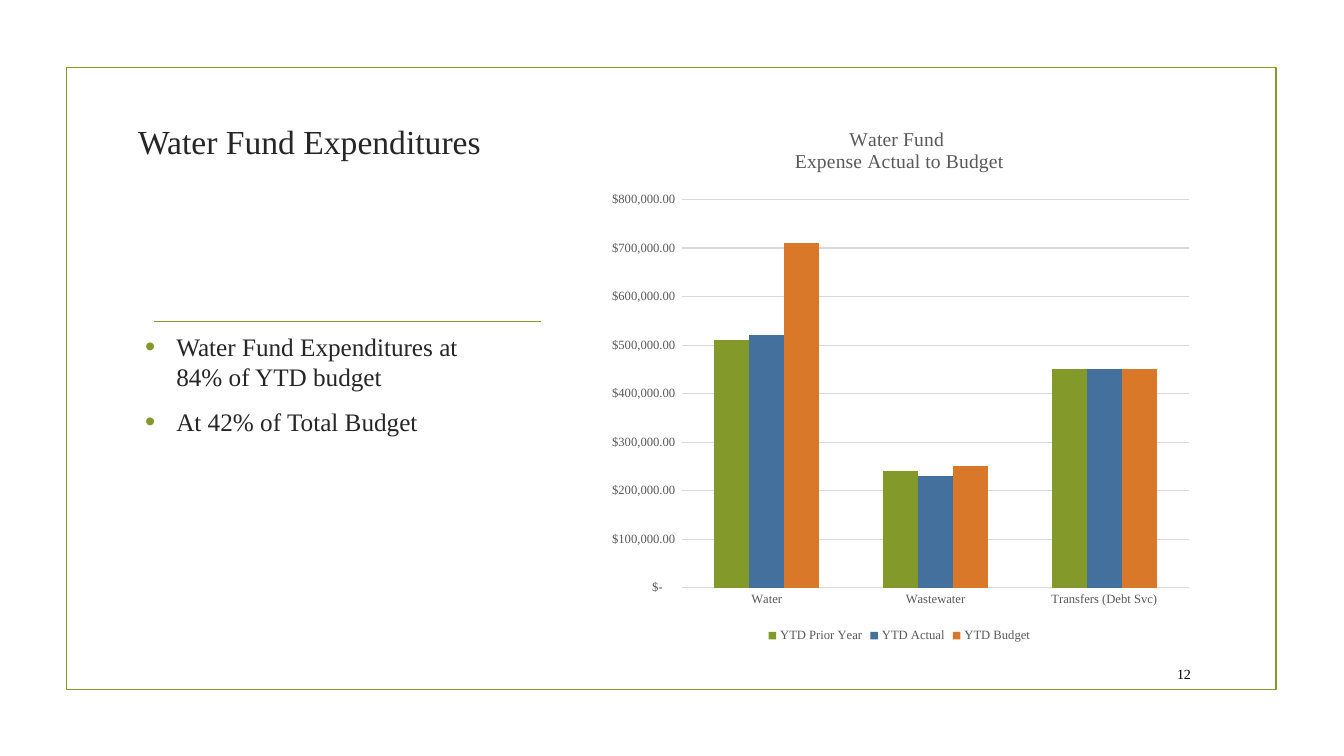
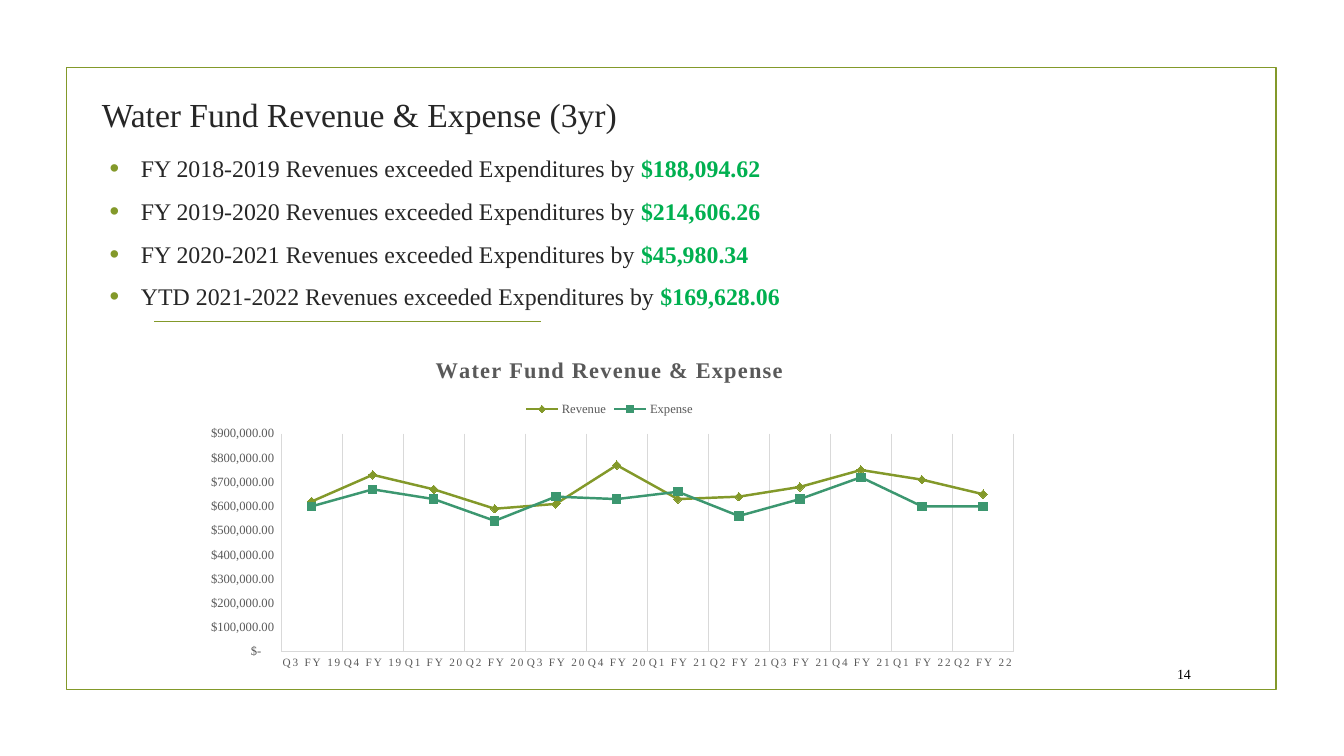
"""Build two water fund slides with bullets and native charts."""
from dataclasses import dataclass

from pptx import Presentation
from pptx.chart.data import CategoryChartData
from pptx.dml.color import RGBColor
from pptx.enum.chart import XL_CHART_TYPE, XL_LEGEND_POSITION, XL_MARKER_STYLE, XL_TICK_MARK
from pptx.enum.shapes import MSO_CONNECTOR, MSO_SHAPE
from pptx.enum.text import MSO_ANCHOR, PP_ALIGN
from pptx.oxml import parse_xml
from pptx.oxml.ns import nsdecls
from pptx.oxml.xmlchemy import OxmlElement
from pptx.util import Inches, Pt

COLUMNS, LINES = XL_CHART_TYPE.COLUMN_CLUSTERED, XL_CHART_TYPE.LINE_MARKERS
LEGEND_BOTTOM, LEGEND_TOP = XL_LEGEND_POSITION.BOTTOM, XL_LEGEND_POSITION.TOP
DIAMOND, SQUARE = XL_MARKER_STYLE.DIAMOND, XL_MARKER_STYLE.SQUARE
TICK_NONE = XL_TICK_MARK.NONE
STRAIGHT, RECTANGLE = MSO_CONNECTOR.STRAIGHT, MSO_SHAPE.RECTANGLE
TOP, MIDDLE, BOTTOM = MSO_ANCHOR.TOP, MSO_ANCHOR.MIDDLE, MSO_ANCHOR.BOTTOM
CENTER, RIGHT = PP_ALIGN.CENTER, PP_ALIGN.RIGHT


@dataclass(frozen=True)
class Theme:
    font: str = "Times New Roman"
    green: str = "83992A"
    blue: str = "44709D"
    orange: str = "D97828"
    teal: str = "3C9770"
    gain: str = "00B050"
    ink: str = "262626"
    black: str = "000000"
    gray: str = "595959"
    grid: str = "D9D9D9"
    title_size: float = 24
    number_size: float = 10
    label_size: float = 9
    rule_width: float = 1.25
    grid_width: float = 0.75
    series_width: float = 1.75


THEME = Theme()
MONEY = '_("$"* #,##0.00_);_("$"* \\(#,##0.00\\);_("$"* "-"??_);_(@_)'


def add_text(para, text, size, color=THEME.ink, bold=False, spacing=0):
    span = para.add_run()
    span.text = text
    span.font.name = THEME.font
    span.font.size = Pt(size)
    span.font.bold = bold
    span.font.color.rgb = RGBColor.from_string(color)
    if spacing:
        span.font._element.set("spc", str(spacing))


def add_frame(page, position, anchor):
    box = page.shapes.add_textbox(*map(Inches, position))
    box.text_frame.word_wrap = True
    box.text_frame.vertical_anchor = anchor
    return box.text_frame


EXCEEDED = " Revenues exceeded Expenditures by "
SLIDES = [
    dict(
        number="12",
        title="Water Fund Expenditures",
        title_at=(0.92, 0.5, 4.3, 1.15),
        body_at=(1.34, 3.24, 3.72, 2.6),
        body_size=18,
        bullets=[("Water Fund Expenditures at 84% of YTD budget", ""), ("At 42% of Total Budget", "")],
        chart_type=COLUMNS,
        chart_at=(5.93, 1.07, 5.98, 5.35),
        plot_at=dict(x=0.14, y=0.17, w=0.84, h=0.72),
        chart_title=["Water Fund ", "Expense Actual to Budget"],
        chart_title_format=dict(size=14, color=THEME.gray),
        legend=LEGEND_BOTTOM,
        maximum=800000,
        category_size=9,
        category_spacing=0,
        categories=["Water", "Wastewater", "Transfers (Debt Svc)"],
        series=[
            ("YTD Prior Year", THEME.green, None, [510000, 240000, 450000]),
            ("YTD Actual", THEME.blue, None, [520000, 230000, 450000]),
            ("YTD Budget", THEME.orange, None, [710000, 250000, 450000]),
        ],
    ),
    dict(
        number="14",
        title="Water Fund Revenue & Expense (3yr)",
        title_at=(0.51, 0.79, 6.11, 0.59),
        body_at=(0.99, 1.48, 8.46, 1.6),
        body_size=17,
        bullets=[
            ("FY 2018-2019" + EXCEEDED, "$188,094.62"),
            ("FY 2019-2020" + EXCEEDED, "$214,606.26"),
            ("FY 2020-2021" + EXCEEDED, "$45,980.34"),
            ("YTD 2021-2022" + EXCEEDED, "$169,628.06"),
        ],
        chart_type=LINES,
        chart_at=(1.87, 3.37, 8.35, 3.33),
        plot_at=dict(x=0.11, y=0.28, w=0.87, h=0.65),
        chart_title=["Water Fund Revenue & Expense"],
        chart_title_format=dict(size=16, color=THEME.gray, bold=True, spacing=100),
        legend=LEGEND_TOP,
        maximum=900000,
        category_size=8,
        category_spacing=120,
        categories=[f"Q{(index + 2) % 4 + 1} FY {19 + (index + 2) // 4}" for index in range(12)],
        series=[
            ("Revenue", THEME.green, DIAMOND,
             [620000, 730000, 670000, 590000, 610000, 770000,
              630000, 640000, 680000, 750000, 710000, 650000]),
            ("Expense", THEME.teal, SQUARE,
             [600000, 670000, 630000, 540000, 640000, 630000,
              660000, 560000, 630000, 720000, 600000, 600000]),
        ],
    ),
]

deck = Presentation()
deck.slide_width, deck.slide_height = Inches(13.33), Inches(7.5)

for content in SLIDES:
    page = deck.slides.add_slide(deck.slide_layouts[6])

    border = page.shapes.add_shape(RECTANGLE, *map(Inches, (0.66, 0.67, 12, 6.17)))
    border.shadow.inherit = False
    border.fill.background()
    rule = page.shapes.add_connector(STRAIGHT, *map(Inches, (1.53, 3.19, 5.37, 3.19)))
    rule._element.spPr.append(OxmlElement("a:effectLst"))
    for outline in (border.line, rule.line):
        outline.color.rgb = RGBColor.from_string(THEME.green)
        outline.width = Pt(THEME.rule_width)

    para = add_frame(page, content["title_at"], BOTTOM).paragraphs[0]
    para.alignment = CENTER
    add_text(para, content["title"], THEME.title_size)

    body = add_frame(page, content["body_at"], TOP)
    for index, (text, amount) in enumerate(content["bullets"]):
        para = body.add_paragraph() if index else body.paragraphs[0]
        properties = para._p.get_or_add_pPr()
        properties.set("marL", str(Inches(0.31)))
        properties.set("indent", str(-Inches(0.31)))
        for bullet in (
            f'<a:buClr {nsdecls("a")}><a:srgbClr val="{THEME.green}"/></a:buClr>',
            f'<a:buSzPct {nsdecls("a")} val="115000"/>',
            f'<a:buFont {nsdecls("a")} typeface="Arial"/>',
            f'<a:buChar {nsdecls("a")} char="•"/>',
        ):
            properties.append(parse_xml(bullet))
        para.space_before = Pt(4 if index else 0)
        para.space_after = Pt(6)
        add_text(para, text, content["body_size"])
        if amount:
            add_text(para, amount, content["body_size"], color=THEME.gain, bold=True)

    data = CategoryChartData(number_format=MONEY)
    data.categories = content["categories"]
    for name, color, marker, values in content["series"]:
        data.add_series(name, values)
    chart = page.shapes.add_chart(
        content["chart_type"], *map(Inches, content["chart_at"]), data
    ).chart
    chart.font.name = THEME.font
    chart.font.size = Pt(THEME.number_size)
    chart.font.color.rgb = RGBColor.from_string(THEME.black)

    chart.has_title = True
    heading = chart.chart_title.text_frame
    for index, text in enumerate(content["chart_title"]):
        para = heading.add_paragraph() if index else heading.paragraphs[0]
        add_text(para, text, **content["chart_title_format"])

    chart.has_legend = True
    chart.legend.position = content["legend"]
    chart.legend.include_in_layout = False

    category_axis, value_axis = chart.category_axis, chart.value_axis
    value_axis.minimum_scale = 0
    value_axis.maximum_scale = content["maximum"]
    value_axis.major_unit = 100000
    value_axis.tick_labels.number_format = MONEY
    value_axis.tick_labels.number_format_is_linked = False
    for axis in (category_axis, value_axis):
        axis.major_tick_mark = axis.minor_tick_mark = TICK_NONE
    for font, size in (
        (chart.legend.font, THEME.label_size),
        (value_axis.tick_labels.font, THEME.label_size),
        (category_axis.tick_labels.font, content["category_size"]),
    ):
        font.name = THEME.font
        font.size = Pt(size)
        font.color.rgb = RGBColor.from_string(THEME.gray)
    if content["category_spacing"]:
        category_axis.tick_labels.font._element.set("spc", str(content["category_spacing"]))

    is_column = content["chart_type"] == COLUMNS
    category_axis.has_major_gridlines = not is_column
    value_axis.has_major_gridlines = is_column
    grid_axis = value_axis if is_column else category_axis
    grid_lines = [grid_axis.major_gridlines.format.line, category_axis.format.line]
    if is_column:
        value_axis.format.line.fill.background()
        chart.plots[0].gap_width = 182
        chart.plots[0].overlap = 0
    else:
        grid_lines.append(value_axis.format.line)
    for line in grid_lines:
        line.color.rgb = RGBColor.from_string(THEME.grid)
        line.width = Pt(THEME.grid_width)

    chart.plots[0].vary_by_categories = False
    for series, (name, color, marker, values) in zip(chart.plots[0].series, content["series"]):
        fills = [series.format.fill]
        if marker:
            series.smooth = False
            series.format.line.width = Pt(THEME.series_width)
            series.marker.style = marker
            series.marker.size = 6
            fills = [series.format.line.fill, series.marker.format.fill,
                     series.marker.format.line.fill]
        for fill in fills:
            fill.solid()
            fill.fore_color.rgb = RGBColor.from_string(color)

    plot_area = chart.element.xpath("c:chart/c:plotArea")[0]
    for layout in plot_area.xpath("c:layout"):
        plot_area.remove(layout)
    modes = '<c:layoutTarget val="inner"/><c:xMode val="edge"/><c:yMode val="edge"/>'
    bounds = "".join(f'<c:{key} val="{value}"/>' for key, value in content["plot_at"].items())
    plot_area.insert(0, parse_xml(
        f'<c:layout {nsdecls("c")}><c:manualLayout>{modes}{bounds}</c:manualLayout></c:layout>'
    ))

    para = add_frame(page, (11.32, 6.53, 0.59, 0.31), MIDDLE).paragraphs[0]
    para.alignment = RIGHT
    add_text(para, content["number"], THEME.number_size, color=THEME.black)

deck.save("out.pptx")
